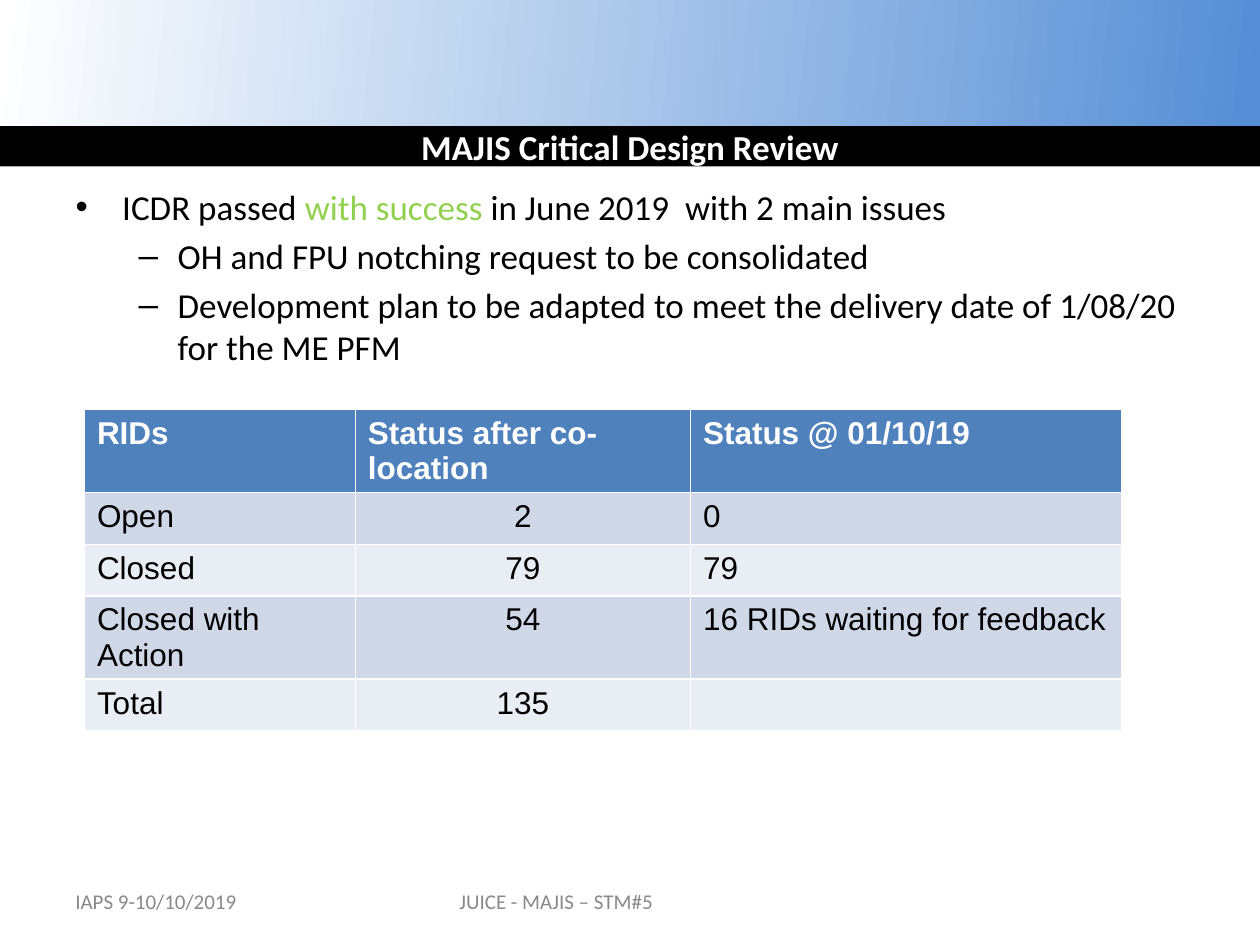
from dataclasses import dataclass

from lxml.etree import SubElement
from pptx import Presentation
from pptx.dml.color import RGBColor
from pptx.enum.shapes import MSO_SHAPE
from pptx.enum.text import MSO_ANCHOR, MSO_AUTO_SIZE, PP_ALIGN
from pptx.oxml.ns import qn
from pptx.util import Inches, Pt


@dataclass(frozen=True)
class Theme:
    heading_font: str = "Calibri"
    table_font: str = "Arial"
    text_size: int = 20
    table_size: int = 18
    footer_size: int = 12
    black: str = "000000"
    white: str = "FFFFFF"
    banner_blue: str = "558ED5"
    success_green: str = "92D050"
    header_blue: str = "4F81BD"
    odd_row: str = "D0D8E8"
    even_row: str = "E9EDF4"
    footer_gray: str = "898989"


theme = Theme()


def style(font, name, size, color, bold=False):
    font.name = name
    font.size = Pt(size)
    font.bold = bold
    font.color.rgb = RGBColor.from_string(color)


def place(shape, left, top, width, height):
    shape.left, shape.top = Inches(left), Inches(top)
    shape.width, shape.height = Inches(width), Inches(height)


deck = Presentation()
deck.slide_width, deck.slide_height = Inches(10), Inches(7.5)
page = deck.slides.add_slide(deck.slide_layouts[1])

# Gradient banner, sent behind the title
banner = page.shapes.add_shape(MSO_SHAPE.RECTANGLE, 0, 0, Inches(10), Inches(1.1))
banner.shadow.inherit = False
banner.line.fill.background()
banner.fill.gradient()
banner.fill.gradient_angle = 174
for stop, color in zip(banner.fill.gradient_stops, (theme.banner_blue, theme.white)):
    stop.color.rgb = RGBColor.from_string(color)
page.shapes._spTree.insert(2, banner._element)

# Title bar
title = page.shapes.title
place(title, 0, 1, 10, 0.32)
title.fill.solid()
title.fill.fore_color.rgb = RGBColor.from_string(theme.black)
frame = title.text_frame
frame.text = "MAJIS Critical Design Review"
frame.word_wrap = False
frame.auto_size = MSO_AUTO_SIZE.NONE
frame.vertical_anchor = MSO_ANCHOR.MIDDLE
frame.paragraphs[0].alignment = PP_ALIGN.CENTER
style(frame.paragraphs[0].runs[0].font, theme.heading_font, theme.text_size, theme.white, True)

# Review outcome: level and coloured spans of each bullet
bullets = [
    (0, [("ICDR passed ", theme.black),
         ("with success ", theme.success_green),
         ("in June 2019  with 2 main issues", theme.black)]),
    (1, [("OH and FPU notching request to be consolidated", theme.black)]),
    (1, [("Development plan to be adapted to meet the delivery date of 1/08/20 "
          "for the ME PFM", theme.black)]),
]
bullet_levels = [("•", 0.37, -0.37), ("–", 0.81, -0.31)]  # mark, margin, indent
body = page.placeholders[1]
place(body, 0.5, 1.42, 9, 5.28)
frame = body.text_frame
frame.auto_size = MSO_AUTO_SIZE.NONE
for index, (level, spans) in enumerate(bullets):
    para = frame.paragraphs[0] if index == 0 else frame.add_paragraph()
    para.level = level
    para.space_before = Pt(4 if index else 0)
    mark, margin, indent = bullet_levels[level]
    properties = para._p.get_or_add_pPr()
    properties.set("marL", str(Inches(margin)))
    properties.set("indent", str(Inches(indent)))
    SubElement(properties, qn("a:buChar")).set("char", mark)
    for text, color in spans:
        span = para.add_run()
        span.text = text
        style(span.font, theme.heading_font, theme.text_size, color)

# Table of review item status
rows = [
    ("RIDs", "Status after co-location", "Status @ 01/10/19"),
    ("Open", "2", "0"),
    ("Closed", "79", "79"),
    ("Closed with Action", "54", "16 RIDs waiting for feedback"),
    ("Total", "135", ""),
]
column_widths = [2.15, 2.66, 3.42]
table = page.shapes.add_table(len(rows), len(column_widths), Inches(0.67), Inches(3.25),
                              Inches(sum(column_widths)), Inches(2.15)).table
for column, width in zip(table.columns, column_widths):
    column.width = Inches(width)
for row_index, values in enumerate(rows):
    is_header = row_index == 0
    table.rows[row_index].height = Inches(0.53 if is_header else 0.41)
    row_fill = theme.odd_row if row_index % 2 else theme.even_row
    for column_index, value in enumerate(values):
        cell = table.cell(row_index, column_index)
        cell.fill.solid()
        cell.fill.fore_color.rgb = RGBColor.from_string(
            theme.header_blue if is_header else row_fill)
        cell.text = value
        para = cell.text_frame.paragraphs[0]
        if column_index == 1 and not is_header:
            para.alignment = PP_ALIGN.CENTER
        style(para.font, theme.table_font, theme.table_size,
              theme.white if is_header else theme.black, is_header)
        for span in para.runs:
            style(span.font, theme.table_font, theme.table_size,
                  theme.white if is_header else theme.black, is_header)

# Footer
footers = [
    ("IAPS 9-10/10/2019", 0.5, 2.33, PP_ALIGN.LEFT),
    ("JUICE - MAJIS – STM#5", 2.83, 3.17, PP_ALIGN.CENTER),
]
for text, left, width, alignment in footers:
    box = page.shapes.add_textbox(Inches(left), Inches(6.95), Inches(width), Inches(0.4))
    frame = box.text_frame
    frame.text = text
    frame.word_wrap = True
    frame.vertical_anchor = MSO_ANCHOR.MIDDLE
    para = frame.paragraphs[0]
    para.alignment = alignment
    style(para.runs[0].font, theme.heading_font, theme.footer_size, theme.footer_gray)

deck.save("out.pptx")
